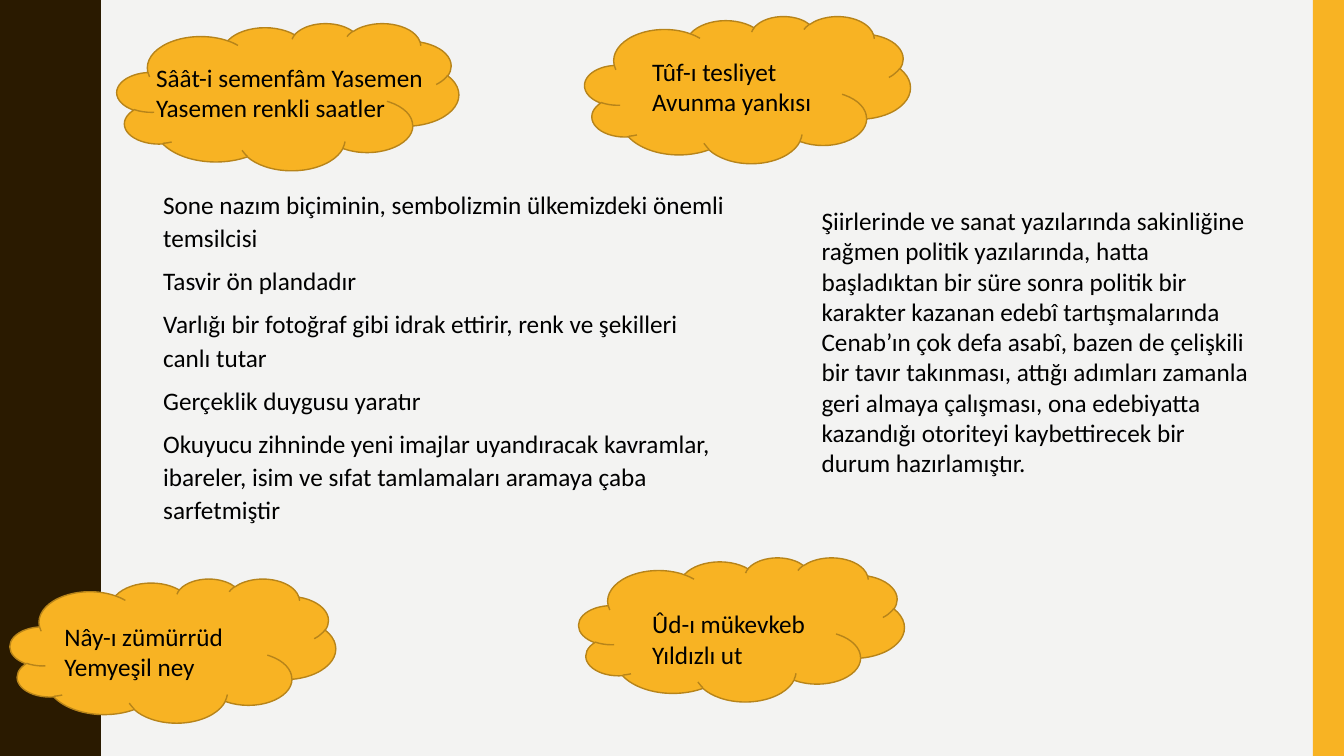
"""Build a slide of poetic phrases in clouds around notes on a poet's style."""
from dataclasses import dataclass
from typing import Any

from lxml.etree import SubElement
from pptx import Presentation
from pptx.dml.color import RGBColor
from pptx.enum.shapes import MSO_SHAPE
from pptx.enum.text import MSO_ANCHOR, PP_ALIGN
from pptx.oxml.ns import qn
from pptx.util import Inches, Pt

COLOURS = {
    "paper": "F3F3F2",
    "wave": "2A1A00",
    "amber": "F8B323",
    "outline": "B7841A",
    "ink": "000000",
}
SLIDE_WIDTH, SLIDE_HEIGHT = 13.33, 7.5
WAVE_PERIOD = 1.5
WAVE_RISE = [
    (0.78, 0), (0.78, 0.07), (0.79, 0.14), (0.8, 0.2), (0.81, 0.25),
    (0.83, 0.29), (0.85, 0.33), (0.87, 0.38), (0.89, 0.42), (0.91, 0.46),
    (0.93, 0.5), (0.95, 0.55), (0.96, 0.61), (0.97, 0.68), (0.97, 0.75),
]
FONT_FORMAT = {"name": "Calibri", "size": Pt(18)}
PLAIN_FORMAT = {"alignment": PP_ALIGN.LEFT}
NOTES_FORMAT = {"alignment": PP_ALIGN.LEFT, "line_spacing": 1.1, "space_before": Pt(7)}
FRAME_FORMAT = {"word_wrap": True, "vertical_anchor": MSO_ANCHOR.TOP}


@dataclass(frozen=True)
class Area:
    """A rectangle on the slide, in inches."""

    left: float
    top: float
    width: float
    height: float

    def lengths(self) -> list[Inches]:
        """Return the rectangle as slide lengths."""
        return [Inches(v) for v in (self.left, self.top, self.width, self.height)]


@dataclass(frozen=True)
class Passage:
    """A text box and its paragraphs."""

    area: Area
    lines: tuple[str, ...]
    notes: bool = False


CLOUDS = [
    Area(5.8, 0.16, 3.23, 1.46),
    Area(1.16, 0.23, 3.39, 1.46),
    Area(5.74, 5.53, 3.23, 1.43),
    Area(0.1, 5.74, 3.23, 1.43),
]
PASSAGES = [
    Passage(Area(1.52, 1.8, 5.8, 3.53), (
        "Sone nazım biçiminin, sembolizmin ülkemizdeki önemli temsilcisi",
        "Tasvir ön plandadır",
        "Varlığı bir fotoğraf gibi idrak ettirir, renk ve şekilleri canlı tutar",
        "Gerçeklik duygusu yaratır",
        "Okuyucu zihninde yeni imajlar uyandıracak kavramlar, ibareler, isim ve "
        "sıfat tamlamaları aramaya çaba sarfetmiştir",
    ), notes=True),
    Passage(Area(8.05, 1.99, 4.45, 2.83), (
        "Şiirlerinde ve sanat yazılarında sakinliğine rağmen politik yazılarında, "
        "hatta başladıktan bir süre sonra politik bir karakter kazanan edebî "
        "tartışmalarında Cenab’ın çok defa asabî, bazen de çelişkili bir tavır "
        "takınması, attığı adımları zamanla geri almaya çalışması, ona edebiyatta "
        "kazandığı otoriteyi kaybettirecek bir durum hazırlamıştır.",
    )),
    Passage(Area(1.45, 0.57, 3.23, 0.71), ("Sâât-i semenfâm Yasemen Yasemen renkli saatler",)),
    Passage(Area(6.37, 0.51, 2.6, 0.73), ("Tûf-ı tesliyet", "Avunma yankısı")),
    Passage(Area(0.54, 6.11, 3.04, 0.71), ("Nây-ı zümürrüd", "Yemyeşil ney")),
    Passage(Area(6.37, 5.99, 2.12, 0.71), ("Ûd-ı mükevkeb", "Yıldızlı ut")),
]


def colour(name: str) -> RGBColor:
    """Return a named colour."""
    return RGBColor.from_string(COLOURS[name])


def apply_format(target: Any, values: dict[str, Any]) -> None:
    """Set each format value on the target."""
    for name, value in values.items():
        setattr(target, name, value)


def paint(shape: Any, fill: str, outline: str | None = None) -> None:
    """Give a shape a flat fill and an optional thin outline."""
    shape.shadow.inherit = False
    shape.fill.solid()
    shape.fill.fore_color.rgb = colour(fill)
    if outline:
        shape.line.color.rgb = colour(outline)
        shape.line.width = Pt(1)
    else:
        shape.line.fill.background()


def draw_wave(page: Any) -> None:
    """Draw the dark band with its wavy right edge."""
    fall = [(x, WAVE_PERIOD - y) for x, y in reversed(WAVE_RISE[1:-1])]
    edge = [
        (x, y + period * WAVE_PERIOD)
        for period in range(round(SLIDE_HEIGHT / WAVE_PERIOD))
        for x, y in WAVE_RISE + fall
    ]
    edge += [(WAVE_RISE[0][0], SLIDE_HEIGHT), (0, SLIDE_HEIGHT)]
    builder = page.shapes.build_freeform(0, 0, scale=Inches(1))
    builder.add_line_segments(edge, close=True)
    paint(builder.convert_to_shape(), "wave")


def draw_shape(page: Any, kind: MSO_SHAPE, area: Area, outline: str | None = None) -> None:
    """Draw an amber preset shape."""
    paint(page.shapes.add_shape(kind, *area.lengths()), "amber", outline)


def write_passage(page: Any, passage: Passage) -> None:
    """Write a passage in its text box."""
    box = page.shapes.add_textbox(*passage.area.lengths())
    frame = box.text_frame
    apply_format(frame, FRAME_FORMAT)
    for index, line in enumerate(passage.lines):
        para = frame.add_paragraph() if index else frame.paragraphs[0]
        apply_format(para, NOTES_FORMAT if passage.notes else PLAIN_FORMAT)
        span = para.add_run()
        span.text = line
        apply_format(span.font, FONT_FORMAT)
        span.font.color.rgb = colour("ink")
        span.font.language_id = None
        SubElement(span.font._element, qn("a:cs"), typeface=FONT_FORMAT["name"])


def main() -> None:
    """Build and save the deck."""
    deck = Presentation()
    deck.slide_width, deck.slide_height = Inches(SLIDE_WIDTH), Inches(SLIDE_HEIGHT)
    page = deck.slides.add_slide(deck.slide_layouts[6])
    page.background.fill.solid()
    page.background.fill.fore_color.rgb = colour("paper")
    draw_wave(page)
    draw_shape(page, MSO_SHAPE.RECTANGLE, Area(13.02, 0, 0.31, SLIDE_HEIGHT))
    for area in CLOUDS:
        draw_shape(page, MSO_SHAPE.CLOUD, area, "outline")
    for passage in PASSAGES:
        write_passage(page, passage)
    deck.save("out.pptx")


if __name__ == "__main__":
    main()
